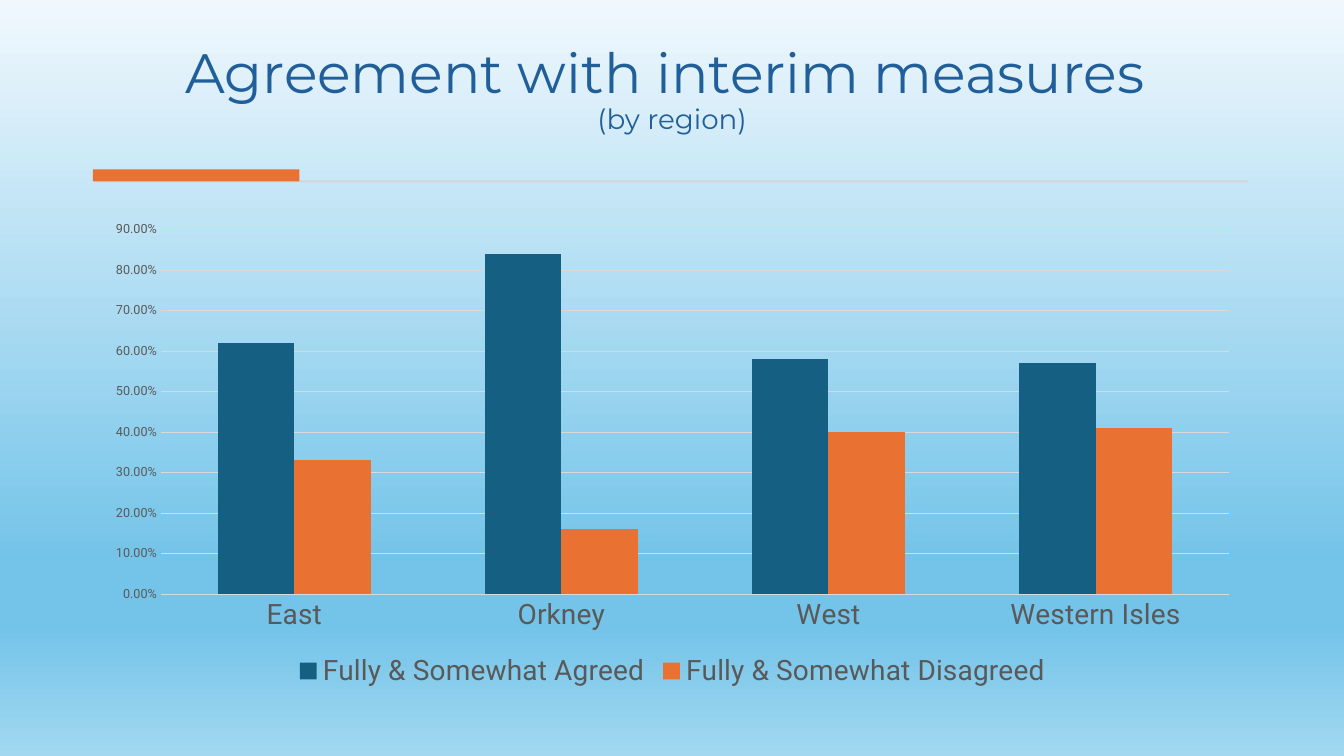
"""Build a slide with a clustered column chart of agreement by region."""
from dataclasses import dataclass

import pptx
import pptx.chart.data
import pptx.dml.color
import pptx.enum.chart
import pptx.enum.shapes
import pptx.enum.text
import pptx.oxml
import pptx.oxml.ns
import pptx.util
from pptx.util import Inches


@dataclass(frozen=True)
class Theme:
    """Colours, fonts and type sizes."""
    title_font: str = "Montserrat"
    chart_font: str = "Roboto"
    title_color: str = "215F9A"
    rule_color: str = "D5D5D5"
    accent_color: str = "E97132"
    agreed_color: str = "156082"
    label_color: str = "595959"
    grid_color: str = "D9D9D9"
    title_size: float = 39.6
    subtitle_size: float = 19.8
    label_size: float = 20
    tick_size: float = 9
    background: tuple = ((0, "F0F8FD"), (74, "74C4E9"), (83, "74C4E9"), (100, "A2D8F0"))


@dataclass(frozen=True)
class Bar:
    """A plain filled rectangle, measured in inches."""
    left: float
    top: float
    width: float
    height: float
    color: str


@dataclass(frozen=True)
class Series:
    """One chart series."""
    name: str
    values: tuple
    color: str


THEME = Theme()
BARS = (
    Bar(0.95, 1.79, 11.43, 0.02, THEME.rule_color),
    Bar(0.92, 1.68, 2.05, 0.12, THEME.accent_color),
)
REGIONS = ("East", "Orkney", "West", "Western Isles")
SERIES = (
    Series("Fully & Somewhat Agreed", (0.62, 0.84, 0.58, 0.57), THEME.agreed_color),
    Series("Fully & Somewhat Disagreed", (0.33, 0.16, 0.4, 0.41), THEME.accent_color),
)


def rgb(color: str) -> pptx.dml.color.RGBColor:
    """Turn a hex string into a colour."""
    return pptx.dml.color.RGBColor.from_string(color)


def style_font(font, name: str, size: float, color: str) -> None:
    """Set the typeface, size and colour of a font."""
    font.name = name
    font.size = pptx.util.Pt(size)
    font.bold = False
    font.color.rgb = rgb(color)


def paint_background(slide) -> None:
    """Fill the slide background with a vertical gradient."""
    fill = slide.background.fill
    fill.gradient()
    stops = "".join(
        f'<a:gs pos="{position * 1000}"><a:srgbClr val="{color}"/></a:gs>'
        for position, color in THEME.background
    )
    gradient = pptx.oxml.parse_xml(
        f'<a:gradFill {pptx.oxml.ns.nsdecls("a")} rotWithShape="1">'
        f'<a:gsLst>{stops}</a:gsLst><a:lin ang="5400000" scaled="0"/></a:gradFill>'
    )
    properties = slide.background._cSld.bg.bgPr
    properties.replace(properties.find(pptx.oxml.ns.qn("a:gradFill")), gradient)


def add_title(slide) -> None:
    """Add the two-line centred title."""
    box = slide.shapes.add_textbox(Inches(0.92), Inches(0.28), Inches(11.49), Inches(1.11))
    frame = box.text_frame
    frame.word_wrap = True
    frame.vertical_anchor = pptx.enum.text.MSO_ANCHOR.BOTTOM
    paragraph = frame.paragraphs[0]
    paragraph.text = "Agreement with interim measures \v(by region)"
    paragraph.alignment = pptx.enum.text.PP_ALIGN.CENTER
    paragraph.line_spacing = 0.9
    for run, size in zip(paragraph.runs, (THEME.title_size, THEME.subtitle_size)):
        style_font(run.font, THEME.title_font, size, THEME.title_color)


def add_bar(slide, bar: Bar) -> None:
    """Draw one filled rectangle."""
    shape = slide.shapes.add_shape(
        pptx.enum.shapes.MSO_SHAPE.RECTANGLE,
        Inches(bar.left), Inches(bar.top), Inches(bar.width), Inches(bar.height),
    )
    shape.shadow.inherit = False
    shape.fill.solid()
    shape.fill.fore_color.rgb = rgb(bar.color)
    shape.line.fill.background()


def style_axis(axis, size: float) -> None:
    """Remove the axis line and ticks and style the labels."""
    axis.major_tick_mark = pptx.enum.chart.XL_TICK_MARK.NONE
    axis.minor_tick_mark = pptx.enum.chart.XL_TICK_MARK.NONE
    axis.format.line.fill.background()
    style_font(axis.tick_labels.font, THEME.chart_font, size, THEME.label_color)


def add_region_chart(slide) -> None:
    """Add the clustered column chart."""
    data = pptx.chart.data.CategoryChartData(number_format="0.00%")
    data.categories = REGIONS
    for series in SERIES:
        data.add_series(series.name, series.values)
    chart = slide.shapes.add_chart(
        pptx.enum.chart.XL_CHART_TYPE.COLUMN_CLUSTERED,
        Inches(0.92), Inches(2.11), Inches(11.5), Inches(4.77), data,
    ).chart
    chart.has_title = False
    chart.font.name = THEME.chart_font
    chart.has_legend = True
    chart.legend.position = pptx.enum.chart.XL_LEGEND_POSITION.BOTTOM
    chart.legend.include_in_layout = False
    style_font(chart.legend.font, THEME.chart_font, THEME.label_size, THEME.label_color)

    style_axis(chart.category_axis, THEME.label_size)
    value_axis = chart.value_axis
    style_axis(value_axis, THEME.tick_size)
    value_axis.minimum_scale, value_axis.maximum_scale = 0, 0.9
    value_axis.major_unit = 0.1
    value_axis.tick_labels.number_format = "0.00%"
    value_axis.tick_labels.number_format_is_linked = False
    grid_line = value_axis.major_gridlines.format.line
    grid_line.color.rgb = rgb(THEME.grid_color)
    grid_line.width = pptx.util.Pt(0.75)

    plot = chart.plots[0]
    plot.vary_by_categories = False
    plot.gap_width = 150
    plot.overlap = 0
    for column, series in zip(plot.series, SERIES):
        column.format.fill.solid()
        column.format.fill.fore_color.rgb = rgb(series.color)


def main() -> None:
    """Assemble and save the presentation."""
    presentation = pptx.Presentation()
    presentation.slide_width = Inches(13.33)
    presentation.slide_height = Inches(7.5)
    slide = presentation.slides.add_slide(presentation.slide_layouts[6])
    paint_background(slide)
    add_title(slide)
    for bar in BARS:
        add_bar(slide, bar)
    add_region_chart(slide)
    presentation.save("out.pptx")


if __name__ == "__main__":
    main()
